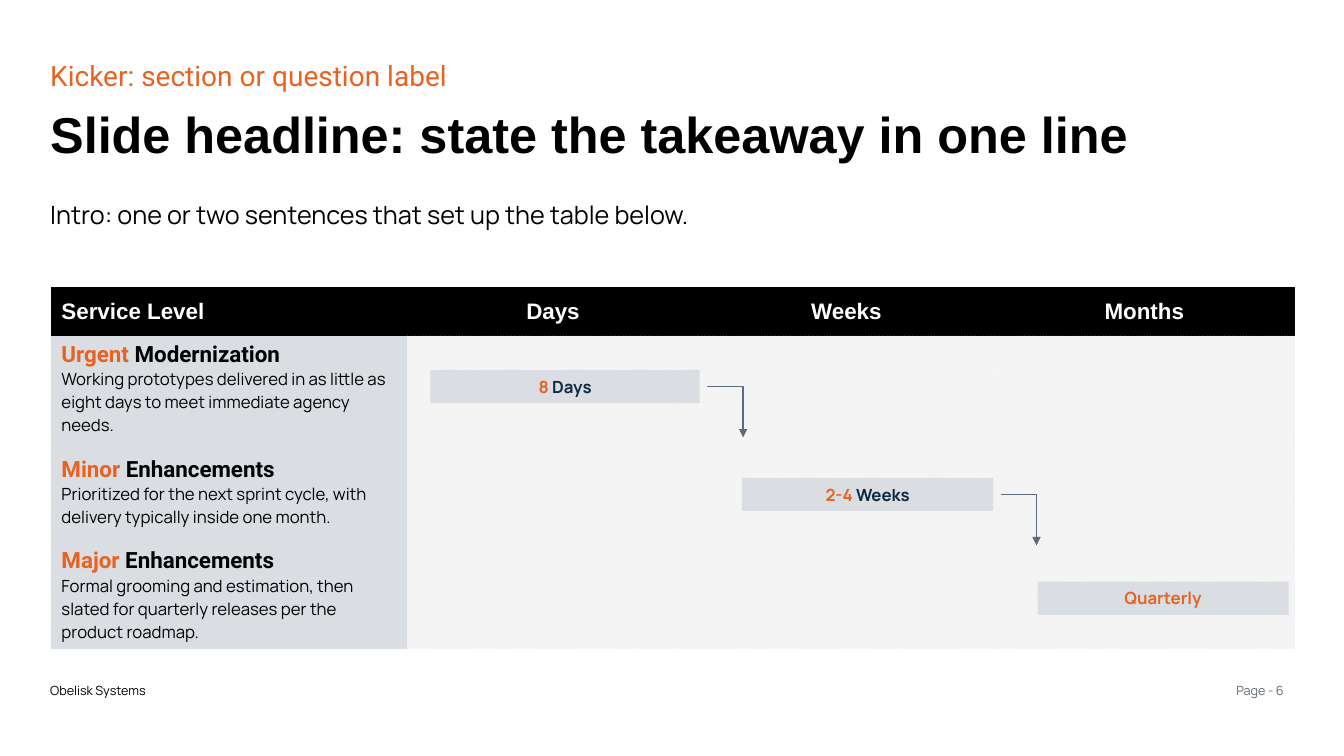
from pptx import Presentation
from pptx import util as u
from pptx.dml.color import RGBColor
from pptx.enum import dml, shapes, text
from pptx.oxml.ns import qn
from lxml import etree

PX = 9144  # 100 px to the inch
HUES = {"ink": "000000", "paper": "FFFFFF", "accent": "E86221", "panel": "DADEE3",
        "hatch": "F2F2F2", "navy": "0E2841", "slate": "5E6B7A"}
PLAIN = "{2D5ABB26-0587-4C30-8999-92F81FD0307C}"  # table style without grid
LEFT, MID, RIGHT = text.PP_ALIGN.LEFT, text.PP_ALIGN.CENTER, text.PP_ALIGN.RIGHT

COLS = [353, 289, 293, 298]
ROWS = [48, 106, 99, 106]
HEADS = ["Service Level", "Days", "Weeks", "Months"]
LEVELS = [
    ("Urgent", " Modernization",
     "Working prototypes delivered in as little as eight days to meet immediate agency needs."),
    ("Minor", " Enhancements",
     "Prioritized for the next sprint cycle, with delivery typically inside one month."),
    ("Major", " Enhancements",
     "Formal grooming and estimation, then slated for quarterly releases per the product roadmap."),
]
# Bars: x and y inside the table, width, accent word, dark word
BARS = [(376, 82, 267, "8", " Days"), (685, 189, 249, "2-4", " Weeks"),
        (978, 292, 249, "Quarterly", "")]


def px(*vals):
    return [u.Emu(v * PX) for v in vals]


def hue(name):
    return RGBColor.from_string(HUES[name])


def paint(item, name):
    item.fill.solid()
    item.fill.fore_color.rgb = hue(name)


def add_run(para, words, size, face, tint, bold=False):
    run = para.add_run()
    run.text = words
    font = run.font
    font.size, font.name, font.bold = u.Pt(size), face, bold
    font.color.rgb = hue(tint)


def label(slide, box, words, size, face, tint, bold=False, align=LEFT,
          anchor=text.MSO_ANCHOR.TOP, space=1.0):
    frame = slide.shapes.add_textbox(*px(*box)).text_frame
    frame.word_wrap = True
    frame.vertical_anchor = anchor
    para = frame.paragraphs[0]
    para.alignment, para.line_spacing = align, space
    add_run(para, words, size, face, tint, bold)


def header(slide, x, y):
    low = text.MSO_ANCHOR.BOTTOM
    label(slide, (x, y, 874, 44), "Kicker: section or question label",
          20, "Roboto", "accent", anchor=low)
    label(slide, (x, y + 44, 1243, 71), "Slide headline: state the takeaway in one line",
          36, "Arial", "ink", True, anchor=low)
    label(slide, (x, y + 144, 1133, 71),
          "Intro: one or two sentences that set up the table below.",
          18, "Manrope", "ink", space=0.9)


def grid(slide, x, y):
    frame = slide.shapes.add_table(len(ROWS), len(COLS), *px(x, y, sum(COLS), sum(ROWS)))
    table = frame.table
    table.horz_banding = False
    table._tbl.tblPr.find(qn("a:tableStyleId")).text = PLAIN
    for col, wide in zip(table.columns, COLS):
        col.width = u.Emu(wide * PX)
    for row, high in zip(table.rows, ROWS):
        row.height = u.Emu(high * PX)

    # Heading row
    for c, head in enumerate(HEADS):
        cell = table.cell(0, c)
        paint(cell, "ink")
        cell.vertical_anchor = text.MSO_ANCHOR.MIDDLE
        para = cell.text_frame.paragraphs[0]
        para.alignment = MID if c else LEFT
        add_run(para, head, 16, "Arial", "paper", True)

    # Service levels, with hatched cells behind the bars
    for r, (key, rest, note) in enumerate(LEVELS, 1):
        cell = table.cell(r, 0)
        paint(cell, "panel")
        cell.vertical_anchor = text.MSO_ANCHOR.MIDDLE
        para = cell.text_frame.paragraphs[0]
        add_run(para, key, 16, "Roboto", "accent", True)
        add_run(para, rest, 16, "Roboto", "ink", True)
        add_run(cell.text_frame.add_paragraph(), note, 12, "Manrope", "ink")
        for c in range(1, len(COLS)):
            fill = table.cell(r, c).fill
            fill.patterned()
            fill.pattern = dml.MSO_PATTERN.DARK_DOWNWARD_DIAGONAL
            fill.fore_color.rgb = hue("paper")
            fill.back_color.rgb = hue("hatch")


def bar(slide, box, key, rest):
    rect = slide.shapes.add_shape(shapes.MSO_SHAPE.RECTANGLE, *px(*box))
    rect.shadow.inherit = False
    paint(rect, "panel")
    rect.line.fill.background()
    rect.text_frame.vertical_anchor = text.MSO_ANCHOR.MIDDLE
    para = rect.text_frame.paragraphs[0]
    para.alignment = MID
    add_run(para, key, 12, "Manrope", "accent", True)
    if rest:
        add_run(para, rest, 12, "Manrope", "navy", True)


def step(slide, x, y, wide=35, high=51):
    # A quarter turn makes the elbow run right, then down
    gap = (high - wide) // 2
    left, top = x - gap, y + gap
    link = slide.shapes.add_connector(
        shapes.MSO_CONNECTOR.ELBOW, *px(left + high, top, left, top + wide))
    link.line.color.rgb = hue("slate")
    link.line.width = u.Pt(1)
    props = link._element.spPr
    props.find(qn("a:xfrm")).set("rot", str(270 * 60000))
    shape = props.find(qn("a:prstGeom"))
    bends = shape.find(qn("a:avLst"))
    if bends is None:
        bends = etree.SubElement(shape, qn("a:avLst"))
    etree.SubElement(bends, qn("a:gd"), name="adj1", fmla="val 1400")
    etree.SubElement(props.find(qn("a:ln")), qn("a:tailEnd"), type="triangle")
    etree.SubElement(props, qn("a:effectLst"))


def timeline(slide, x, y):
    high = 33
    for dx, dy, wide, key, rest in BARS:
        bar(slide, (x + dx, y + dy, wide, high), key, rest)
    for dx, dy, wide, *_ in BARS[:-1]:
        step(slide, x + dx + wide + 8, y + dy + high // 2)


def footer(slide, x, y):
    label(slide, (x, y, 626, 25), "Obelisk Systems", 9, "Manrope", "ink")
    label(slide, (x + 1150, y, 93, 25), "Page - 6", 9, "Manrope", "slate", align=RIGHT)


def main():
    deck = Presentation()
    deck.slide_width, deck.slide_height = px(1333, 750)
    slide = deck.slides.add_slide(deck.slide_layouts[6])
    header(slide, 40, 52)
    grid(slide, 51, 285)
    timeline(slide, 51, 285)
    footer(slide, 40, 673)
    deck.save("out.pptx")


if __name__ == "__main__":
    main()
